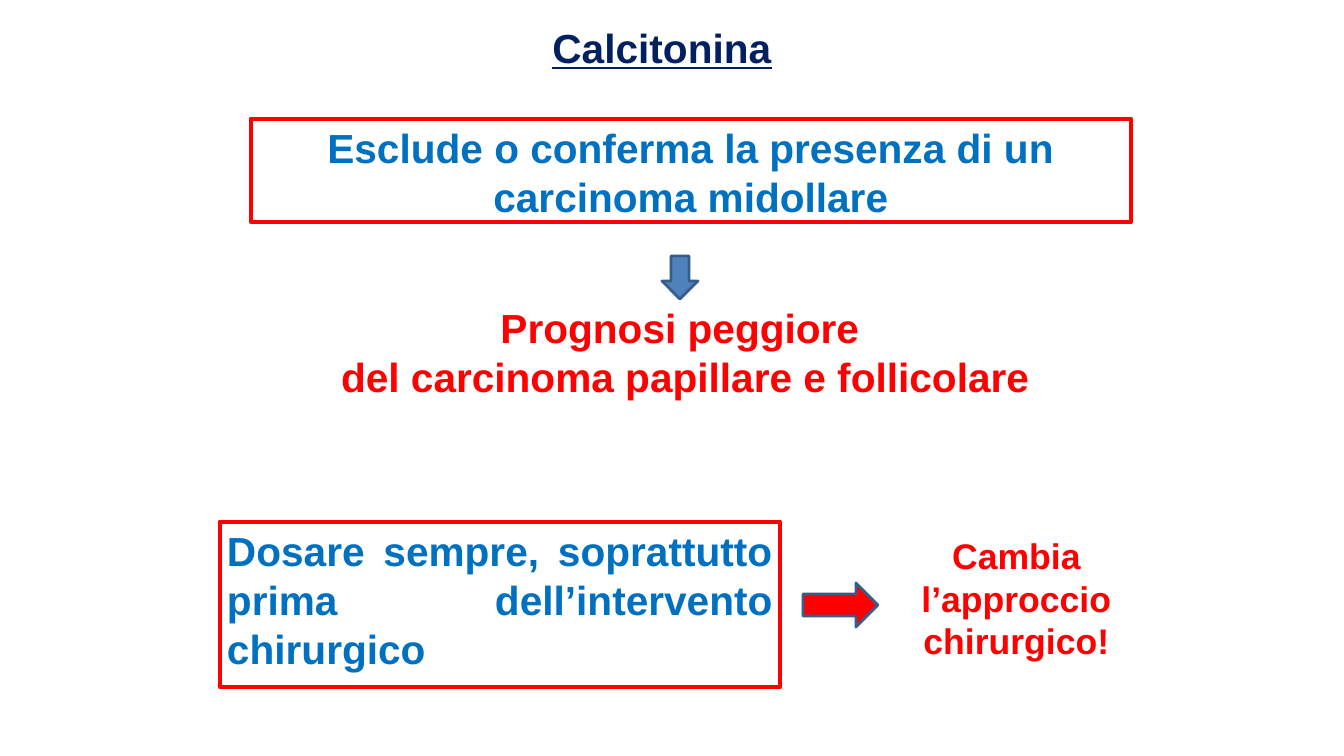
from pptx import Presentation, util as u
from pptx.dml.color import RGBColor
from pptx.enum import shapes, text

PX = 914400 / 100.8
RED, BLUE, NAVY, STEEL, SLATE, WHITE = "FF0000", "0070C0", "002060", "4F81BD", "385D8A", "FFFFFF"
CENTER, JUSTIFY = text.PP_ALIGN.CENTER, text.PP_ALIGN.JUSTIFY


def color(value):
    return RGBColor.from_string(value)


def px(*lengths):
    return [u.Emu(round(length * PX)) for length in lengths]


presentation = Presentation()
presentation.slide_width, presentation.slide_height = px(1344, 756)
slide = presentation.slides.add_slide(presentation.slide_layouts[6])

RECTANGLE = shapes.MSO_SHAPE.RECTANGLE
DOWN = shapes.MSO_SHAPE.DOWN_ARROW
RIGHT = shapes.MSO_SHAPE.RIGHT_ARROW

outlined = [
    (RECTANGLE, (251, 119, 880, 103), WHITE, RED, 3.5),
    (DOWN, (662, 256, 36, 43), STEEL, SLATE, 2),
    (RECTANGLE, (220, 522, 560, 165), WHITE, RED, 3.5),
    (RIGHT, (803, 583, 75, 44), RED, SLATE, 2),
]
drawn = []
for kind, box, fill, line, width in outlined:
    shape = slide.shapes.add_shape(kind, *px(*box))
    shape.shadow.inherit = False
    shape.fill.solid()
    shape.fill.fore_color.rgb = color(fill)
    shape.line.color.rgb = color(line)
    shape.line.width = u.Pt(width)
    drawn.append(shape)
finding, down_arrow, advice, right_arrow = drawn

title = slide.shapes.add_textbox(*px(542, 19, 240, 47))
prognosis = slide.shapes.add_textbox(*px(315, 299, 730, 144))
consequence = slide.shapes.add_textbox(*px(867, 530, 299, 150))

texts = [
    (title, "Calcitonina", 29, NAVY, CENTER, False),
    (finding, "Esclude o conferma la presenza di un carcinoma midollare", 29, BLUE, CENTER, True),
    (prognosis, "Prognosi peggiore\n del carcinoma papillare e follicolare", 29, RED, CENTER, False),
    (advice, "Dosare sempre, soprattutto prima dell’intervento chirurgico", 29, BLUE, JUSTIFY, True),
    (consequence, "Cambia\nl’approccio\nchirurgico!", 25.4, RED, CENTER, False),
]
for shape, words, size, ink, alignment, wrap in texts:
    frame = shape.text_frame
    frame.text = words
    frame.word_wrap = wrap
    frame.vertical_anchor = text.MSO_ANCHOR.TOP
    frame.margin_left, frame.margin_top, frame.margin_right, frame.margin_bottom = px(7, 4, 7, 4)
    for paragraph in frame.paragraphs:
        paragraph.alignment = alignment
        for run in paragraph.runs:
            run.font.name = "Arial"
            run.font.size = u.Pt(size)
            run.font.bold = True
            run.font.underline = shape is title
            run.font.color.rgb = color(ink)

presentation.save("out.pptx")
